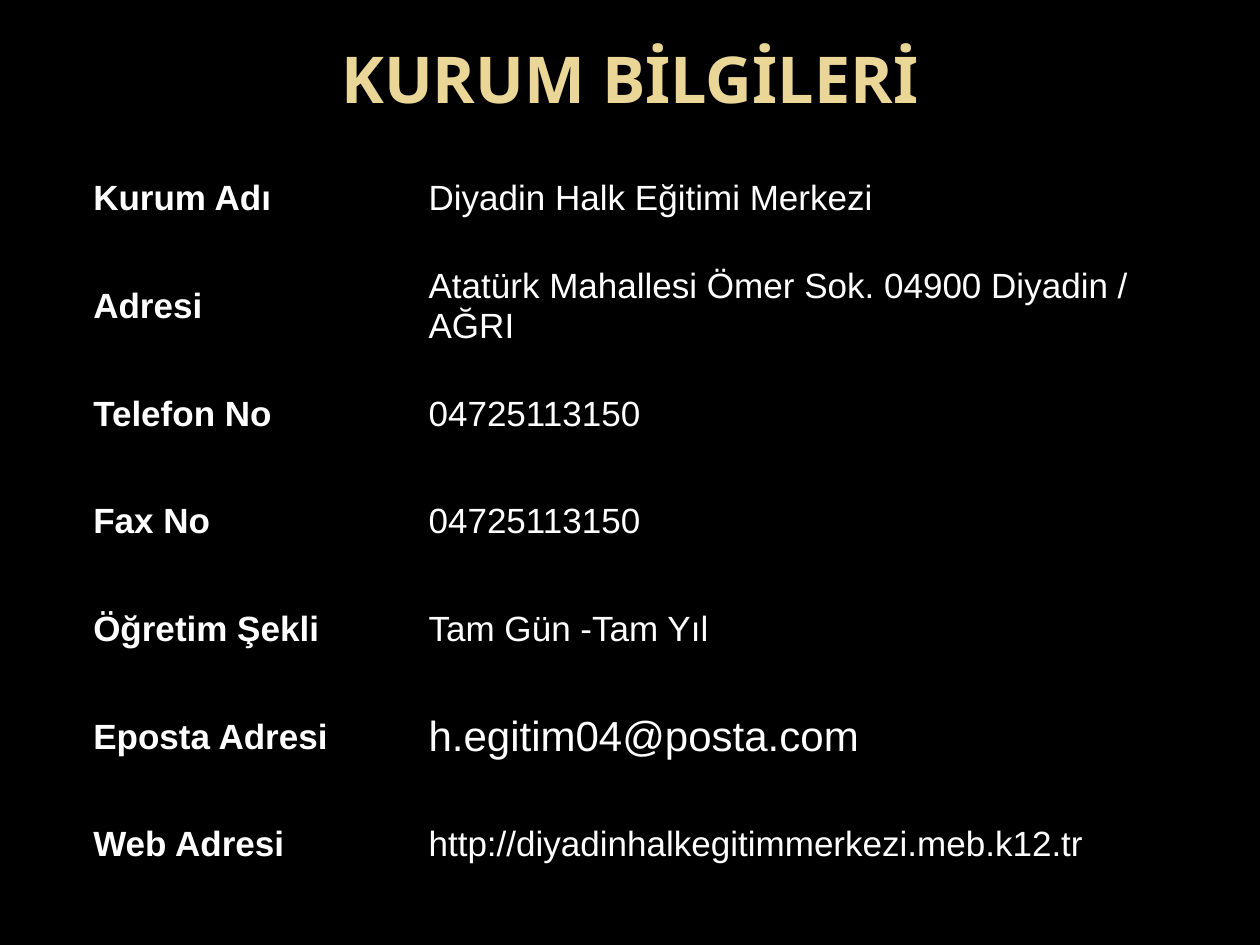
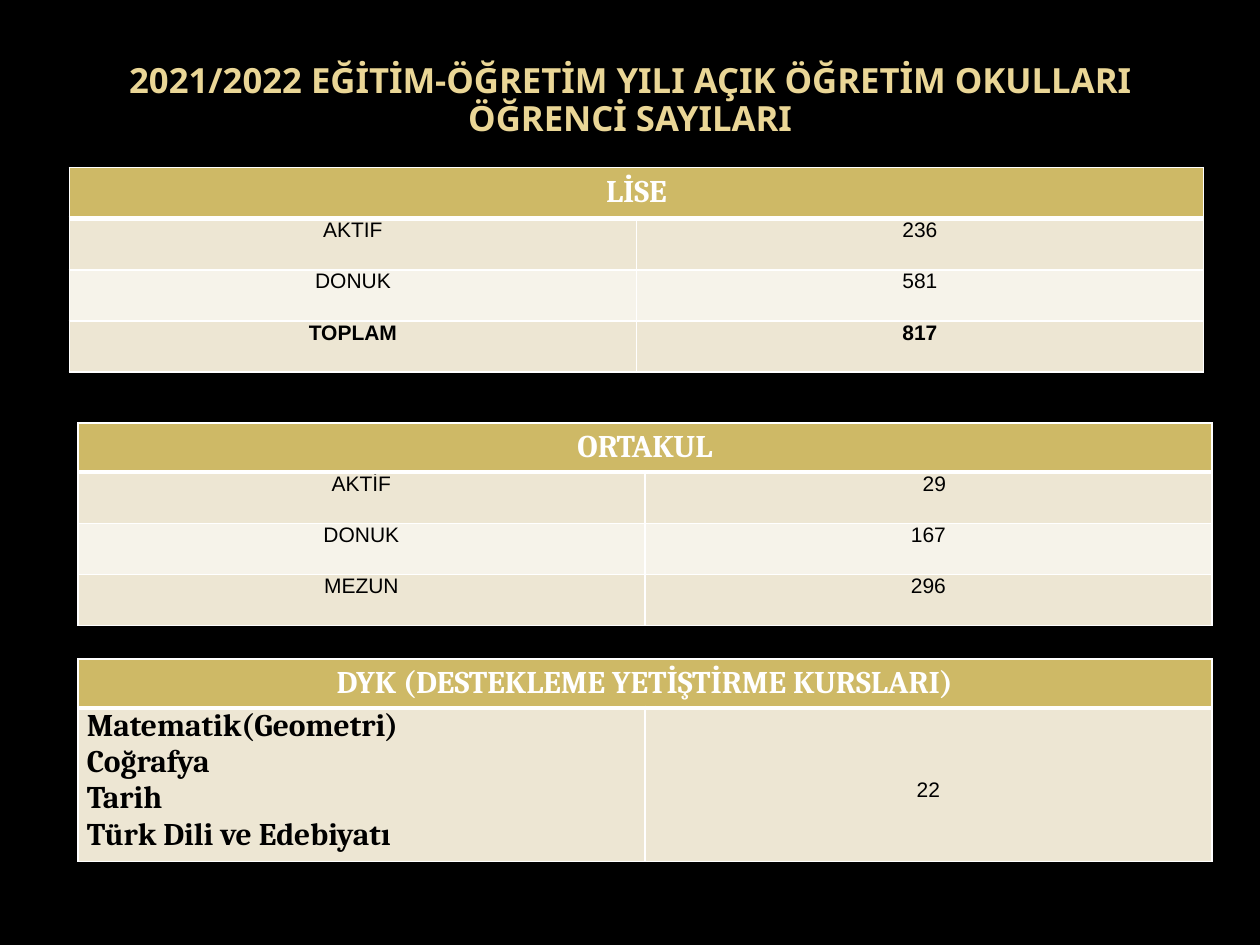
"""Builds two slides with an institution's details and its open-school student numbers."""
from dataclasses import dataclass

from lxml import etree
from pptx import Presentation
from pptx import slide as sl
from pptx import table as tb
from pptx import text as tx
from pptx import util as u
from pptx.dml.color import RGBColor
from pptx.enum import text as te
from pptx.oxml import ns

BLACK = RGBColor(0x00, 0x00, 0x00)
WHITE = RGBColor(0xFF, 0xFF, 0xFF)
TITLE_GOLD = RGBColor(0xEA, 0xD6, 0x96)
HEADER_GOLD = RGBColor(0xCE, 0xB9, 0x66)
BANDS = (RGBColor(0xED, 0xE6, 0xD3), RGBColor(0xF6, 0xF3, 0xEA))

TITLE_FONT, HEADING_FONT, BODY_FONT = "Noto Sans", "Cambria", "Arial"
SIDE_INSET = u.Cm(0.18)
CENTER = te.PP_ALIGN.CENTER
LEFT = te.PP_ALIGN.LEFT
MIDDLE = te.MSO_ANCHOR.MIDDLE


@dataclass(frozen=True)
class Detail:
    label: str
    value: str
    size: float = 20


@dataclass(frozen=True)
class Entry:
    label: str
    count: str
    bold: bool = False
    heading_style: bool = False
    count_left: float = 0.18
    count_top: float = 0


@dataclass(frozen=True)
class School:
    heading: str
    left: float
    top: float
    heading_height: float
    row_height: float
    entries: tuple[Entry, ...]


DETAILS = (
    Detail("Kurum Adı", "Diyadin Halk Eğitimi Merkezi"),
    Detail("Adresi", "Atatürk Mahallesi Ömer Sok. 04900 Diyadin / AĞRI"),
    Detail("Telefon No", "04725113150"),
    Detail("Fax No", "04725113150"),
    Detail("Öğretim Şekli", "Tam Gün -Tam Yıl"),
    Detail("Eposta Adresi", "h.egitim04@posta.com", 24),
    Detail("Web Adresi", "http://diyadinhalkegitimmerkezi.meb.k12.tr"),
)

SCHOOLS = (
    School("LİSE", 1.4, 3.38, 1.03, 1.03, (
        Entry("AKTİF", "236"),
        Entry("DONUK", "581"),
        Entry("TOPLAM", "817", bold=True),
    )),
    School("ORTAKUL", 1.57, 8.53, 0.97, 1.03, (
        Entry("AKTİF", "29", count_left=0.42),
        Entry("DONUK", "167"),
        Entry("MEZUN", "296"),
    )),
    School("DYK (DESTEKLEME YETİŞTİRME KURSLARI)", 1.57, 13.28, 0.99, 3.1, (
        Entry("Matematik(Geometri)\nCoğrafya\nTarih\nTürk Dili ve Edebiyatı", "22",
              heading_style=True, count_top=1.42),
    )),
)


def write(frame: tx.text.TextFrame, content: str, *, size: float, font: str = BODY_FONT,
          color: RGBColor = BLACK, bold: bool = False, align: te.PP_ALIGN = LEFT,
          spacing: float = 1.0) -> None:
    """Fill a text frame, one paragraph for each line of the content."""
    for index, line in enumerate(content.split("\n")):
        paragraph = frame.add_paragraph() if index else frame.paragraphs[0]
        paragraph.alignment = align
        paragraph.line_spacing = spacing
        run = paragraph.add_run()
        run.text = line
        run.font.name = font
        run.font.size = u.Pt(size)
        run.font.bold = bold
        run.font.color.rgb = color


def set_borders(cell: tb._Cell, color: RGBColor, top: float = 1, bottom: float = 1) -> None:
    """Draw the four borders of a cell, with widths in points."""
    properties = cell._tc.get_or_add_tcPr()
    for side, width in (("L", 1), ("R", 1), ("T", top), ("B", bottom)):
        line = etree.SubElement(properties, ns.qn(f"a:ln{side}"), w=str(u.Pt(width)))
        fill = etree.SubElement(line, ns.qn("a:solidFill"))
        etree.SubElement(fill, ns.qn("a:srgbClr"), val=str(color))


def paint(cell: tb._Cell, color: RGBColor) -> None:
    """Give a cell a plain fill."""
    cell.fill.solid()
    cell.fill.fore_color.rgb = color


def set_insets(cell: tb._Cell, left: int = SIDE_INSET, top: int = 0) -> None:
    """Set the narrow insets of a body cell."""
    cell.margin_left, cell.margin_right = left, SIDE_INSET
    cell.margin_top, cell.margin_bottom = top, 0


def add_grid(slide: sl.Slide, left: float, top: float, widths: list[float],
             heights: list[float]) -> tb.Table:
    """Add a table without banding whose place and sizes are in centimetres."""
    grid = slide.shapes.add_table(len(heights), len(widths), u.Cm(left), u.Cm(top),
                                  u.Cm(sum(widths)), u.Cm(sum(heights))).table
    grid.first_row = grid.horz_banding = False
    for column, width in zip(grid.columns, widths):
        column.width = u.Cm(width)
    for row, height in zip(grid.rows, heights):
        row.height = u.Cm(height)
    return grid


def add_titled_slide(deck, heading: str, size: float, bottom_inset: float) -> sl.Slide:
    """Add a slide with the shared gold title."""
    slide = deck.slides.add_slide(deck.slide_layouts[5])
    title = slide.shapes.title
    title.left, title.top = u.Cm(1.27), u.Cm(0.76)
    title.width, title.height = u.Cm(22.86), u.Cm(3.18)
    frame = title.text_frame
    frame.word_wrap = True
    frame.auto_size = te.MSO_AUTO_SIZE.NONE
    frame.vertical_anchor = MIDDLE
    frame.margin_bottom = u.Cm(bottom_inset)
    write(frame, heading, size=size, font=TITLE_FONT, color=TITLE_GOLD, bold=True,
          align=CENTER, spacing=0.9)
    return slide


def add_details(slide: sl.Slide) -> None:
    """Add the label and value table of the institution."""
    grid = add_grid(slide, 1.7, 2.92, [6.76, 15.44], [2.17] * len(DETAILS))
    for row, detail in enumerate(DETAILS):
        label, value = grid.cell(row, 0), grid.cell(row, 1)
        for cell in (label, value):
            set_borders(cell, BLACK)
            cell.fill.background()
            set_insets(cell)
            cell.vertical_anchor = MIDDLE
        write(label.text_frame, detail.label, size=20, color=WHITE, bold=True)
        write(value.text_frame, detail.value, size=detail.size, color=WHITE)


def add_school(slide: sl.Slide, school: School) -> None:
    """Add a student table with a merged heading and banded rows."""
    heights = [school.heading_height] + [school.row_height] * len(school.entries)
    grid = add_grid(slide, school.left, school.top, [11.43, 11.43], heights)
    heading = grid.cell(0, 0)
    heading.merge(grid.cell(0, 1))
    for cell in (heading, grid.cell(0, 1)):
        set_borders(cell, WHITE, bottom=3)
        paint(cell, HEADER_GOLD)
    write(heading.text_frame, school.heading, size=18, font=HEADING_FONT, color=WHITE,
          bold=True, align=CENTER)
    for row, entry in enumerate(school.entries, start=1):
        label, count = grid.cell(row, 0), grid.cell(row, 1)
        for cell in (label, count):
            set_borders(cell, WHITE, top=3 if row == 1 else 1)
            paint(cell, BANDS[(row - 1) % 2])
        set_insets(label)
        set_insets(count, u.Cm(entry.count_left), u.Cm(entry.count_top))
        if entry.heading_style:
            write(label.text_frame, entry.label, size=18, font=HEADING_FONT, bold=True)
        else:
            write(label.text_frame, entry.label, size=12, bold=entry.bold, align=CENTER)
        write(count.text_frame, entry.count, size=12, bold=entry.bold, align=CENTER)


def main() -> None:
    """Build and save the deck."""
    deck = Presentation()
    deck.slide_width, deck.slide_height = u.Cm(25.4), u.Cm(19.05)
    backdrop = deck.slide_master.background.fill
    backdrop.solid()
    backdrop.fore_color.rgb = BLACK

    add_details(add_titled_slide(deck, "KURUM BİLGİLERİ", 36.9, 1.5))

    students = add_titled_slide(
        deck, "2021/2022 EĞİTİM-ÖĞRETİM YILI AÇIK ÖĞRETİM OKULLARI ÖĞRENCİ SAYILARI", 19.8, 0.74)
    for school in SCHOOLS:
        add_school(students, school)

    deck.save("out.pptx")


if __name__ == "__main__":
    main()
